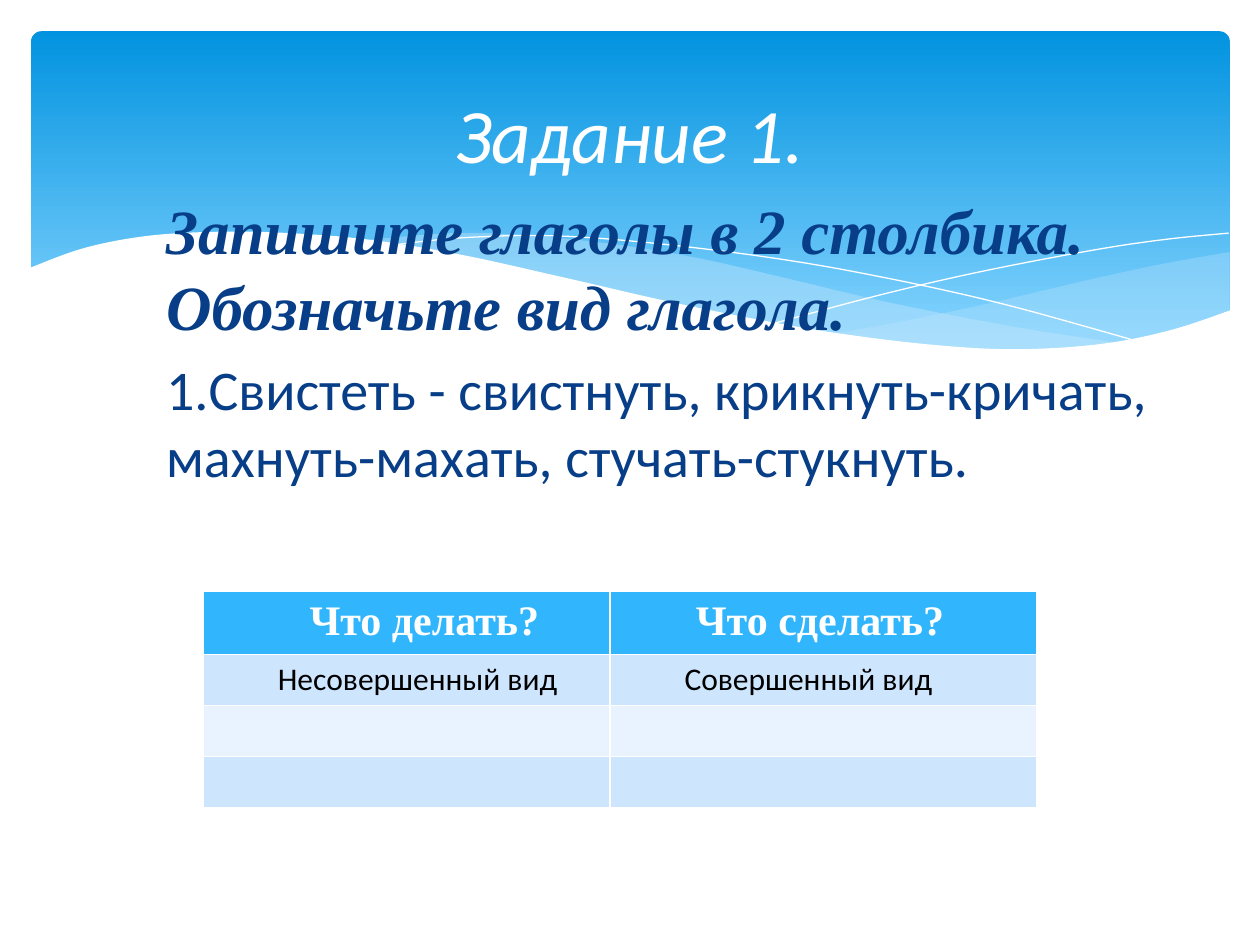
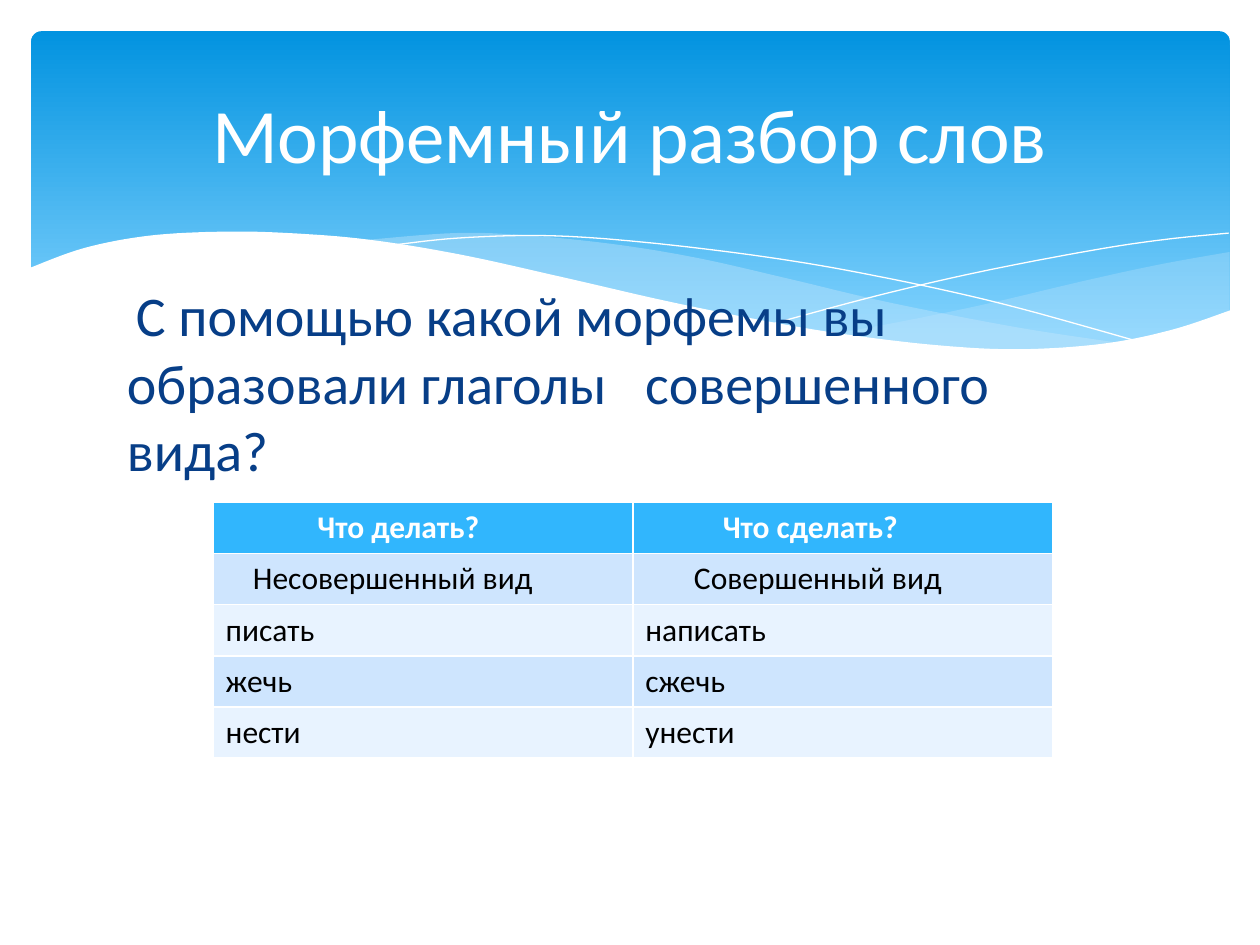
from lxml import etree
from pptx import Presentation
from pptx.dml.color import RGBColor
from pptx.enum.shapes import MSO_SHAPE as Shape
from pptx.enum.text import MSO_ANCHOR as Anchor, PP_ALIGN as Align
from pptx.oxml.ns import qn
from pptx.util import Cm, Pt

# Shared look
WHITE, BLACK, NAVY = "FFFFFF", "000000", "073E87"
HEAD, BANDS = "31B6FD", ("CEE5FE", "E8F3FF")
MIST = "C6E7FC"
SANS, SERIF = "Calibri", "Times New Roman"
PAD = 0.25

# Waves in cm: each outline is a chain of smooth edges
WAVES = [
    dict(fill=MIST, alpha=29, edges=[
        [(24.79, 5.08), (23.39, 5.33), (21.87, 5.66), (19.79, 6.15),
         (17.93, 6.53), (16.79, 6.73)],
        [(16.79, 6.73), (18.26, 6.91), (19.84, 7.04), (21.21, 7.04),
         (22.58, 6.91), (23.75, 6.65), (24.79, 6.27)]]),
    dict(fill=MIST, alpha=40, edges=[
        [(22.68, 6.93), (20.5, 6.6), (17.93, 6.1), (15.98, 5.64), (14.1, 5.21),
         (12.42, 4.93), (10.67, 4.75), (9.17, 4.7), (7.26, 4.85)],
        [(7.26, 4.85), (9.19, 5.16), (11.4, 5.64), (13.46, 6.1), (15.27, 6.48),
         (17.27, 6.81), (19, 7.01), (20.78, 7.06), (22.68, 6.93)]]),
    dict(edges=[
        [(7.85, 4.95), (9.22, 4.8), (11, 4.75), (12.95, 4.88), (15.44, 5.18),
         (17.65, 5.56), (20.19, 6.12), (23.04, 6.91)]]),
    dict(edges=[
        [(15.57, 6.53), (17.65, 5.97), (19.71, 5.49), (22, 5.05),
         (23.47, 4.83), (24.77, 4.7)]]),
    dict(fill=WHITE, alpha=100, edges=[
        [(24.82, 6.25), (23.62, 6.65), (22.23, 6.93), (20.55, 7.04),
         (18.9, 6.96), (16.97, 6.73), (15.32, 6.45), (13.44, 6.07),
         (11.35, 5.59), (9.27, 5.13), (7.42, 4.83), (5.84, 4.7), (4.5, 4.67),
         (3.02, 4.75), (1.7, 5), (0.58, 5.41)],
        [(0.58, 8.36), (24.82, 8.36)]]),
]

# Content: a text run is (words, letter spacing in points);
# a table cell is (words, left indent in cm)
SLIDES = [
    dict(
        title="Задание 1.", slant=True,
        box=(3.1, 3.73, 20.57, 12.4),
        body=[
            dict(runs=[("Запишите глаголы в 2 столбика. Обозначьте вид глагола.", 0)],
                 size=36, font=SERIF, strong=True, pitch=43.5),
            dict(runs=[("1.Свистеть - свистнуть, крикнуть-кричать, "
                        "махнуть-махать, стучать-стукнуть.", 0)], size=32),
        ],
        table=dict(
            at=(4.1, 11.92), cols=(8.2, 8.6), rows=(1.17, 1.03, 1.03, 1.03),
            font=SERIF, size=24,
            cells=[[("Что делать?", 2.14), ("Что сделать?", 1.73)],
                   [("Несовершенный вид", 1.5), ("Совершенный вид", 1.5)],
                   [("", PAD), ("", PAD)],
                   [("", PAD), ("", PAD)]])),
    dict(
        title="Морфемный разбор слов", slant=False,
        box=(2.31, 5.54, 20.7, 11.48),
        body=[
            dict(runs=[("С помощью какой морфемы вы образовали глаголы", 0),
                       (" ", 14.5), ("совершенного вида?", 0)],
                 size=32, indent=0.18),
        ],
        table=dict(
            at=(4.3, 10.13), cols=(8.46, 8.46), rows=(1.03,) * 5,
            font=SANS, size=18,
            cells=[[("Что делать?", 2.1), ("Что сделать?", 1.81)],
                   [("Несовершенный вид", 0.8), ("Совершенный вид", 1.23)],
                   [("писать", PAD), ("написать", PAD)],
                   [("жечь", PAD), ("сжечь", PAD)],
                   [("нести", PAD), ("унести", PAD)]])),
]


def rgb(code):
    return RGBColor.from_string(code)


def style(font, size, color, name=SANS, bold=False, slant=False):
    font.name, font.size = name, Pt(size)
    font.bold, font.italic = bold, slant
    font.color.rgb = rgb(color)


def curve(knots, steps=8):
    """Points of a Catmull-Rom spline through the knots."""
    ends = [knots[0], *knots, knots[-1]]
    pts = []
    for a, b, c, d in zip(ends, ends[1:], ends[2:], ends[3:]):
        for k in range(steps):
            t = k / steps
            pts.append(tuple(
                q + t / 2 * (r - p + t * (2 * p - 5 * q + 4 * r - s
                                          + t * (3 * (q - r) + s - p)))
                for p, q, r, s in zip(a, b, c, d)))
    return pts + [knots[-1]]


def add_wave(slide, edges, fill=None, alpha=100):
    pts = [(Cm(x), Cm(y)) for edge in edges for x, y in curve(edge)]
    pen = slide.shapes.build_freeform(*pts[0])
    pen.add_line_segments(pts[1:], close=bool(fill))
    wave = pen.convert_to_shape()
    wave.shadow.inherit = False
    if fill is None:
        wave.fill.background()
        wave.line.color.rgb = rgb(WHITE)
        wave.line.width = Pt(0)
        return
    wave.line.fill.background()
    wave.fill.solid()
    wave.fill.fore_color.rgb = rgb(fill)
    if alpha < 100:
        color = wave.fill._xPr.find(qn("a:solidFill"))[0]
        etree.SubElement(color, qn("a:alpha")).set("val", str(alpha * 1000))


def add_banner(slide):
    panel = slide.shapes.add_shape(
        Shape.ROUNDED_RECTANGLE, Cm(0.63), Cm(0.63), Cm(24.16), Cm(6.86))
    panel.adjustments[0] = 0.03
    panel.shadow.inherit = False
    panel.line.fill.background()
    panel.fill.gradient()
    panel.fill.gradient_angle = 270
    stops = panel.fill.gradient_stops
    for stop, place, color in zip(stops, (0, 0.9), ("0293E0", "83D3FE")):
        stop.position = place
        stop.color.rgb = rgb(color)
    for wave in WAVES:
        add_wave(slide, **wave)


def add_frame(slide, box):
    frame = slide.shapes.add_textbox(*map(Cm, box)).text_frame
    frame.word_wrap = True
    return frame


def add_title(slide, text, slant):
    frame = add_frame(slide, (1.27, 0.94, 22.86, 3.48))
    frame.vertical_anchor = Anchor.MIDDLE
    frame.text = text
    para = frame.paragraphs[0]
    para.alignment = Align.CENTER
    style(para.runs[0].font, 44, WHITE, slant=slant)


def add_body(slide, box, paras):
    frame = add_frame(slide, box)
    for i, item in enumerate(paras):
        para = frame.add_paragraph() if i else frame.paragraphs[0]
        if i:
            para.space_before = Pt(item["size"] * 0.2)
        if "pitch" in item:
            para.line_spacing = Pt(item["pitch"])
        if "indent" in item:
            para._p.get_or_add_pPr().set("indent", str(Cm(item["indent"])))
        strong = item.get("strong", False)
        for words, gap in item["runs"]:
            run = para.add_run()
            run.text = words
            style(run.font, item["size"], NAVY, item.get("font", SANS),
                  strong, strong)
            if gap:
                run._r.get_or_add_rPr().set("spc", str(int(gap * 100)))


def add_grid(slide, at, cols, rows, font, size, cells):
    grid = slide.shapes.add_table(
        len(rows), len(cols), *map(Cm, (*at, sum(cols), sum(rows)))).table
    for col, width in zip(grid.columns, cols):
        col.width = Cm(width)
    for r, (row, height) in enumerate(zip(grid.rows, rows)):
        row.height = Cm(height)
        for cell, (words, left) in zip(row.cells, cells[r]):
            cell.fill.solid()
            cell.fill.fore_color.rgb = rgb(BANDS[(r - 1) % 2] if r else HEAD)
            cell.margin_left = Cm(left)
            cell.text = words
            for run in cell.text_frame.paragraphs[0].runs:
                if r:
                    style(run.font, 18, BLACK)
                else:
                    style(run.font, size, WHITE, font, bold=True)


def main():
    deck = Presentation()
    deck.slide_width, deck.slide_height = Cm(25.4), Cm(19.05)
    for page in SLIDES:
        slide = deck.slides.add_slide(deck.slide_layouts[6])
        add_banner(slide)
        add_body(slide, page["box"], page["body"])
        add_title(slide, page["title"], page["slant"])
        add_grid(slide, **page["table"])
    deck.save("out.pptx")


if __name__ == "__main__":
    main()
